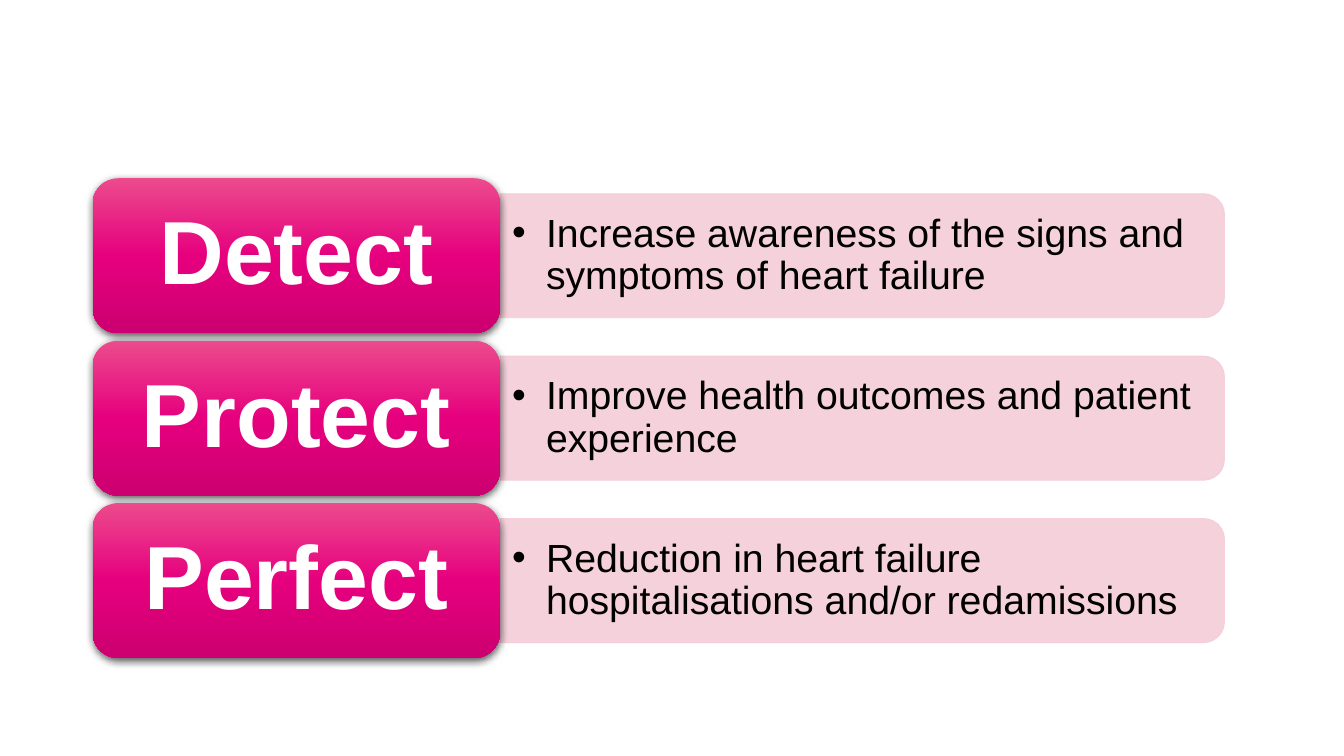
from copy import deepcopy

from lxml import etree
from pptx import Presentation
from pptx.dml.color import RGBColor
from pptx.enum.shapes import MSO_SHAPE
from pptx.enum.text import MSO_ANCHOR, PP_ALIGN
from pptx.oxml.ns import qn
from pptx.util import Cm, Pt

ROUNDED = MSO_SHAPE.ROUNDED_RECTANGLE
TOP_ROUNDED = MSO_SHAPE.ROUND_2_SAME_RECTANGLE
MIDDLE = MSO_ANCHOR.MIDDLE
CENTER = PP_ALIGN.CENTER

COLORS = {
    "panel": "F5CCD8",
    "pink_light": "EC4B8D",
    "pink": "E6007E",
    "pink_dark": "CC0070",
    "label": "FFFFFF",
    "text": "000000",
}
FONT = "Arial"
GOALS = [
    ("Detect", "Increase awareness of the signs and symptoms of heart failure"),
    ("Protect", "Improve health outcomes and patient experience"),
    ("Perfect", "Reduction in heart failure hospitalisations and/or redamissions"),
]


def rgb(name):
    return RGBColor.from_string(COLORS[name])


def set_alpha(color_parent, percent):
    for color in color_parent.iter(qn("a:srgbClr")):
        etree.SubElement(color, qn("a:alpha"), val=str(percent * 1000))


def set_frame(frame, side, end):
    frame.word_wrap = True
    frame.vertical_anchor = MIDDLE
    frame.margin_left = frame.margin_right = Cm(side)
    frame.margin_top = frame.margin_bottom = Cm(end)


def set_font(paragraph, size, color, bold=False):
    paragraph.line_spacing = 0.9
    font = paragraph.font
    font.name, font.size, font.bold = FONT, Pt(size), bold
    font.color.rgb = rgb(color)


def fill_gradient(shape):
    """Vertical three-stop pink gradient."""
    shape.fill.gradient()
    shape.fill.gradient_angle = 270
    stops = shape._element.spPr.find(".//" + qn("a:gsLst"))
    stops.append(deepcopy(stops[-1]))
    names = ("pink_light", "pink", "pink_dark")
    for i, (stop, name) in enumerate(zip(shape.fill.gradient_stops, names)):
        stop.color.rgb = rgb(name)
        stop.position = i / 2


def add_soft_shadow(shape):
    shape.shadow.inherit = False
    effects = shape._element.spPr.find(qn("a:effectLst"))
    shadow = etree.SubElement(
        effects, qn("a:outerShdw"), blurRad=str(Pt(4.5)), dist=str(Pt(1.5)),
        dir="5400000", algn="ctr", rotWithShape="0")
    etree.SubElement(shadow, qn("a:srgbClr"), val="000000")
    set_alpha(shadow, 63)


def add_bullet(paragraph):
    properties = paragraph._p.get_or_add_pPr()
    properties.set("marL", str(Cm(0.64)))
    properties.set("indent", str(Cm(-0.64)))
    bullet_color = etree.SubElement(properties, qn("a:buClr"))
    etree.SubElement(bullet_color, qn("a:srgbClr"), val=COLORS["text"])
    etree.SubElement(properties, qn("a:buFont"), typeface=FONT)
    etree.SubElement(properties, qn("a:buChar"), char="•")


def add_panel(shapes, left, top, width, height, description):
    # Top-rounded shape turned a quarter so that its right side is rounded
    panel = shapes.add_shape(
        TOP_ROUNDED, Cm(left + (width - height) / 2),
        Cm(top + (height - width) / 2), Cm(height), Cm(width))
    panel.rotation = 90
    panel.shadow.inherit = False
    panel.fill.solid()
    panel.fill.fore_color.rgb = panel.line.color.rgb = rgb("panel")
    panel.line.width = Pt(0.5)
    set_alpha(panel._element.spPr, 90)

    # Upright text over the panel
    inset = 0.11
    box = shapes.add_textbox(Cm(left), Cm(top + inset),
                             Cm(width - inset), Cm(height - 2 * inset))
    set_frame(box.text_frame, 0.23, 0.11)
    paragraph = box.text_frame.paragraphs[0]
    paragraph.text = description
    paragraph.level = 1
    add_bullet(paragraph)
    set_font(paragraph, 21, "text")


def add_label(shapes, left, top, width, height, word):
    label = shapes.add_shape(ROUNDED, Cm(left), Cm(top), Cm(width), Cm(height))
    fill_gradient(label)
    label.line.fill.background()
    add_soft_shadow(label)
    set_frame(label.text_frame, 0.5, 0.25)
    paragraph = label.text_frame.paragraphs[0]
    paragraph.text = word
    paragraph.alignment = CENTER
    set_font(paragraph, 48, "label", bold=True)


def add_goal_list(slide, left, top, width, height):
    """Stack one row per goal: a label and the panel it opens into."""
    shapes = slide.shapes.add_group_shape().shapes
    gap = 0.14
    row_height = (height - gap * (len(GOALS) - 1)) / len(GOALS)
    label_width = 0.36 * width
    panel_height = 0.8 * row_height
    for i, (word, description) in enumerate(GOALS):
        row_top = top + i * (row_height + gap)
        add_panel(shapes, left + label_width, row_top + 0.1 * row_height,
                  width - label_width, panel_height, description)
        add_label(shapes, left, row_top, label_width, row_height, word)


def main():
    prs = Presentation()
    prs.slide_width, prs.slide_height = Cm(25.4), Cm(14.29)
    slide = prs.slides.add_slide(prs.slide_layouts[6])
    add_goal_list(slide, 1.75, 3.37, 21.39, 9.07)
    prs.save("out.pptx")


if __name__ == "__main__":
    main()
